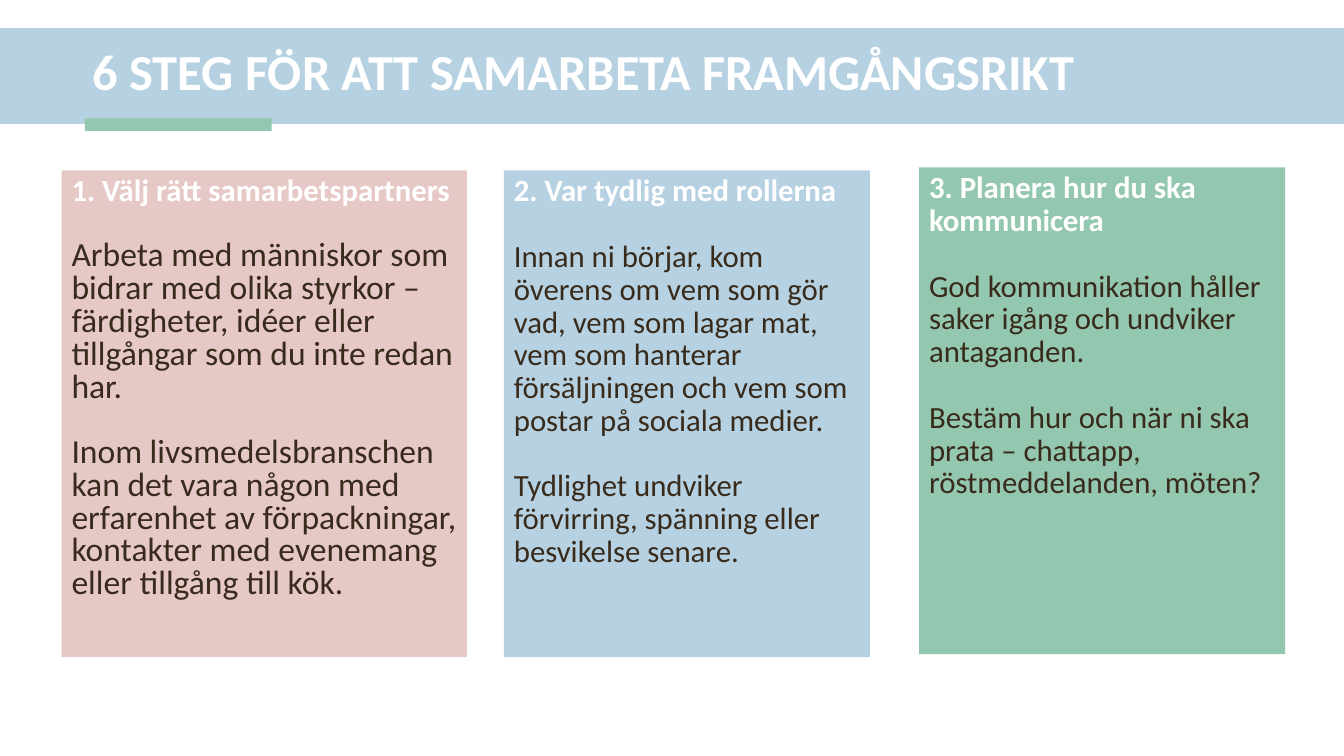
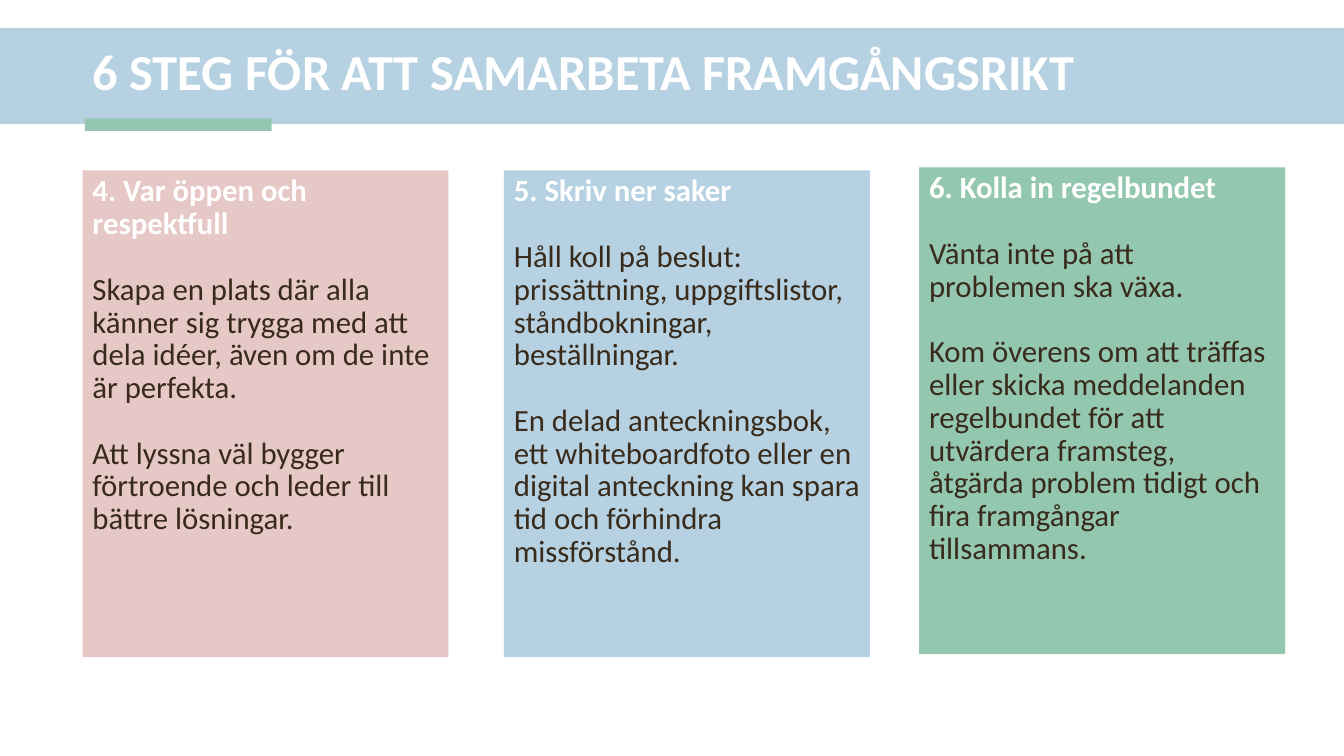
"""Build two slides with six steps for working together successfully."""
from pptx import Presentation
from pptx.dml.color import RGBColor
from pptx.enum import shapes, text
from pptx.util import Pt

WHITE = RGBColor(0xFF, 0xFF, 0xFF)
BROWN = RGBColor(0x38, 0x2B, 0x1B)
PINK = RGBColor(0xE6, 0xC8, 0xC7)
BLUE = RGBColor(0xB6, 0xD1, 0xE1)
GREEN = RGBColor(0x94, 0xC7, 0xB0)
FONT = "Calibri"
LINE = Pt(23.4)
CARD_W = 261.4
CARD_H = 347.8
TITLE = "6 STEG FÖR ATT SAMARBETA FRAMGÅNGSRIKT"

SLIDES = [
    [
        (44, 121.7, 289.5, PINK, 24, [
            "1. Välj rätt samarbetspartners",
            "Arbeta med människor som bidrar med olika styrkor – färdigheter, "
            "idéer eller tillgångar som du inte redan har.",
            "Inom livsmedelsbranschen kan det vara någon med erfarenhet av "
            "förpackningar, kontakter med evenemang eller tillgång till kök."]),
        (360, 121.7, CARD_W, BLUE, 22, [
            "2. Var tydlig med rollerna",
            "Innan ni börjar, kom överens om vem som gör vad, vem som lagar mat, "
            "vem som hanterar försäljningen och vem som postar på sociala medier.",
            "Tydlighet undviker förvirring, spänning eller besvikelse senare."]),
        (656.6, 119.5, CARD_W, GREEN, 22, [
            "3. Planera hur du ska kommunicera",
            "God kommunikation håller saker igång och undviker antaganden.",
            "Bestäm hur och när ni ska prata – chattapp, röstmeddelanden, möten?"]),
    ],
    [
        (59, 121.7, CARD_W, PINK, 22, [
            "4. Var öppen och respektfull",
            "Skapa en plats där alla känner sig trygga med att dela idéer, "
            "även om de inte är perfekta.",
            "Att lyssna väl bygger förtroende och leder till bättre lösningar."]),
        (360, 121.7, CARD_W, BLUE, 22, [
            "5. Skriv ner saker",
            "Håll koll på beslut: prissättning, uppgiftslistor, ståndbokningar, "
            "beställningar.",
            "En delad anteckningsbok, ett whiteboardfoto eller en digital "
            "anteckning kan spara tid och förhindra missförstånd."]),
        (656.6, 119.5, CARD_W, GREEN, 22, [
            "6. Kolla in regelbundet",
            "Vänta inte på att problemen ska växa.",
            "Kom överens om att träffas eller skicka meddelanden regelbundet för "
            "att utvärdera framsteg, åtgärda problem tidigt och fira framgångar "
            "tillsammans."]),
    ],
]


def add_rect(s, left, top, width, height, color):
    sp = s.shapes.add_shape(shapes.MSO_SHAPE.RECTANGLE,
                            Pt(left), Pt(top), Pt(width), Pt(height))
    sp.shadow.inherit = False
    sp.fill.solid()
    sp.fill.fore_color.rgb = color
    sp.line.fill.background()
    return sp


def set_font(p, size, color, bold):
    p.alignment = text.PP_ALIGN.LEFT
    p.font.name = FONT
    p.font.size = Pt(size)
    p.font.bold = bold
    p.font.color.rgb = color


prs = Presentation()
prs.slide_width, prs.slide_height = Pt(960), Pt(540)

layout = prs.slide_layouts[5]
for ph in list(layout.placeholders):
    if ph.placeholder_format.type != shapes.PP_PLACEHOLDER.TITLE:
        layout.shapes.element.remove(ph.element)

for number, cards in enumerate(SLIDES):
    s = prs.slides.add_slide(layout)

    if number == 0:
        band = add_rect(s, 0, 20, 960, 68.5, BLUE)
        accent = add_rect(s, 60.6, 84.5, 133.4, 9, GREEN)
        for sp in (band, accent):
            layout.shapes.element.append(sp.element)

    title = s.shapes.title
    title.left, title.top, title.width, title.height = Pt(59), Pt(24.5), Pt(859), Pt(57)
    tf = title.text_frame
    tf.text = TITLE
    tf.auto_size = text.MSO_AUTO_SIZE.NONE
    tf.vertical_anchor = text.MSO_ANCHOR.MIDDLE
    p = tf.paragraphs[0]
    p.line_spacing = 0.9
    set_font(p, 36, WHITE, True)

    for left, top, width, color, size, lines in cards:
        tf = add_rect(s, left, top, width, CARD_H, color).text_frame
        tf.word_wrap = True
        tf.vertical_anchor = text.MSO_ANCHOR.TOP
        for i, line in enumerate(lines):
            p = tf.add_paragraph() if i else tf.paragraphs[0]
            p.text = line
            p.line_spacing = LINE
            if i:
                p.space_before = LINE
                set_font(p, size, BROWN, False)
            else:
                set_font(p, 22, WHITE, True)

prs.save("out.pptx")
